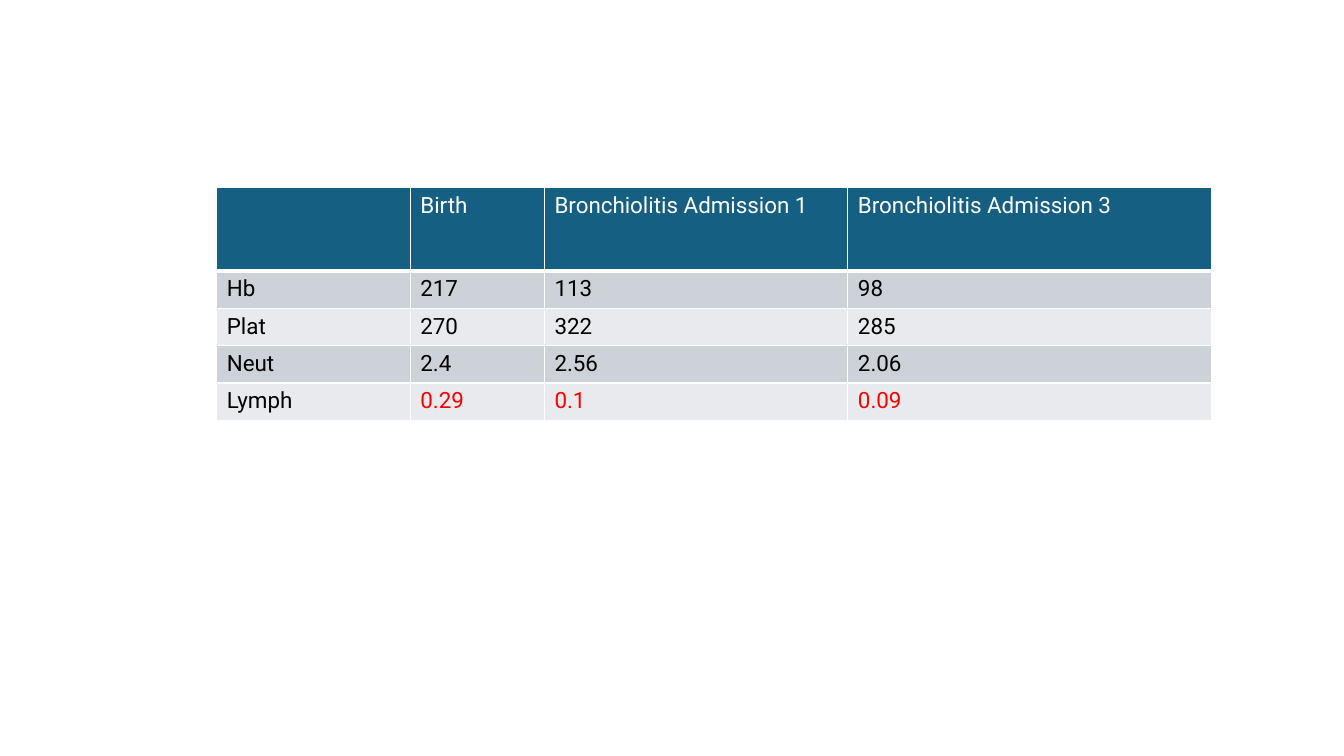
import dataclasses

import lxml.etree
import pptx
import pptx.dml.color
import pptx.oxml.ns
import pptx.table
import pptx.util

Inches = pptx.util.Inches
Pt = pptx.util.Pt
RGBColor = pptx.dml.color.RGBColor

# Colours
WHITE = RGBColor(0xFF, 0xFF, 0xFF)
BLACK = RGBColor(0x00, 0x00, 0x00)
RED = RGBColor(0xFF, 0x00, 0x00)
HEADER_BLUE = RGBColor(0x15, 0x60, 0x82)
BAND_DARK = RGBColor(0xCC, 0xD2, 0xD8)
BAND_LIGHT = RGBColor(0xE8, 0xEA, 0xED)

# Table layout
TABLE_LEFT, TABLE_TOP = 2.15, 1.86
COLUMN_WIDTHS = [1.92, 1.33, 3.01, 3.61]
HEADER_HEIGHT, BODY_HEIGHT = 0.83, 0.37
FONT_FORMAT = {"name": "Roboto", "size": Pt(16), "bold": False}


@dataclasses.dataclass
class BloodRow:
    texts: list[str]
    height: float = BODY_HEIGHT
    fill: RGBColor = BAND_LIGHT
    label_color: RGBColor = BLACK
    value_color: RGBColor = BLACK
    bottom_border: float = 1


BLOOD_ROWS = [
    BloodRow(["", "Birth", "Bronchiolitis Admission 1", "Bronchiolitis Admission 3"],
             HEADER_HEIGHT, HEADER_BLUE, WHITE, WHITE, bottom_border=3),
    BloodRow(["Hb", "217", "113", "98"], fill=BAND_DARK),
    BloodRow(["Plat", "270", "322", "285"]),
    BloodRow(["Neut", "2.4", "2.56", "2.06"], fill=BAND_DARK),
    BloodRow(["Lymph", "0.29", "0.1", "0.09"], value_color=RED),
]


def set_borders(cell: pptx.table._Cell, bottom_width: float) -> None:
    """Draw white borders on all four sides of a cell."""
    qn = pptx.oxml.ns.qn
    properties = cell._tc.get_or_add_tcPr()
    widths = {"a:lnL": 1, "a:lnR": 1, "a:lnT": 1, "a:lnB": bottom_width}
    for tag, width in widths.items():
        line = lxml.etree.SubElement(properties, qn(tag), w=str(Pt(width)))
        fill = lxml.etree.SubElement(line, qn("a:solidFill"))
        lxml.etree.SubElement(fill, qn("a:srgbClr"), val=str(WHITE))


def fill_cell(cell: pptx.table._Cell, text: str, color: RGBColor, row: BloodRow) -> None:
    """Give a cell its borders, background and formatted text."""
    set_borders(cell, row.bottom_border)
    cell.fill.solid()
    cell.fill.fore_color.rgb = row.fill
    paragraph = cell.text_frame.paragraphs[0]
    if text:
        run = paragraph.add_run()
        run.text = text
        for attribute, value in FONT_FORMAT.items():
            setattr(run.font, attribute, value)
        run.font.color.rgb = color


def add_blood_table(slide: pptx.slide.Slide) -> None:
    """Add the table of blood counts."""
    total_height = sum(row.height for row in BLOOD_ROWS)
    table = slide.shapes.add_table(
        len(BLOOD_ROWS), len(COLUMN_WIDTHS),
        Inches(TABLE_LEFT), Inches(TABLE_TOP),
        Inches(sum(COLUMN_WIDTHS)), Inches(total_height),
    ).table
    for column, width in zip(table.columns, COLUMN_WIDTHS):
        column.width = Inches(width)
    for row_index, row in enumerate(BLOOD_ROWS):
        table.rows[row_index].height = Inches(row.height)
        for column_index, text in enumerate(row.texts):
            color = row.value_color if column_index else row.label_color
            fill_cell(table.cell(row_index, column_index), text, color, row)


def main() -> None:
    presentation = pptx.Presentation()
    presentation.slide_width = Inches(13.33)
    presentation.slide_height = Inches(7.5)
    slide = presentation.slides.add_slide(presentation.slide_layouts[6])
    add_blood_table(slide)
    presentation.save("out.pptx")


if __name__ == "__main__":
    main()
